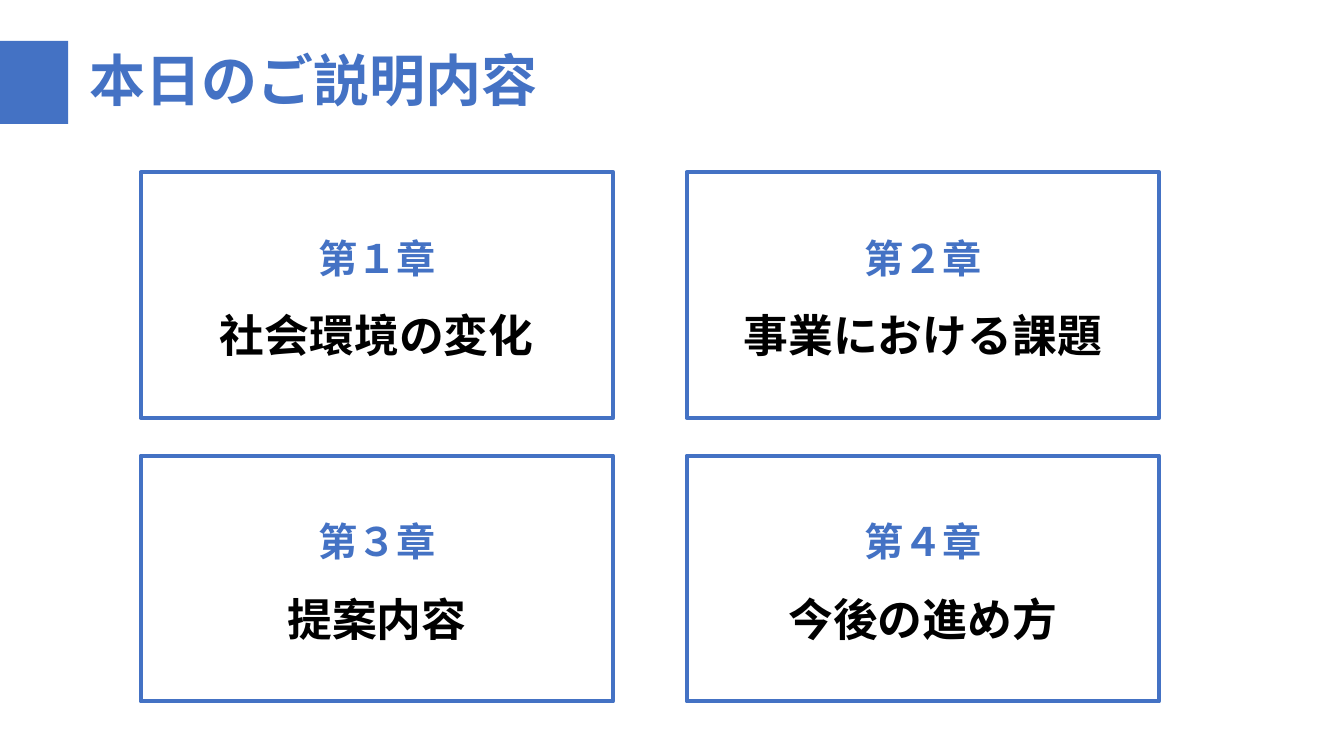
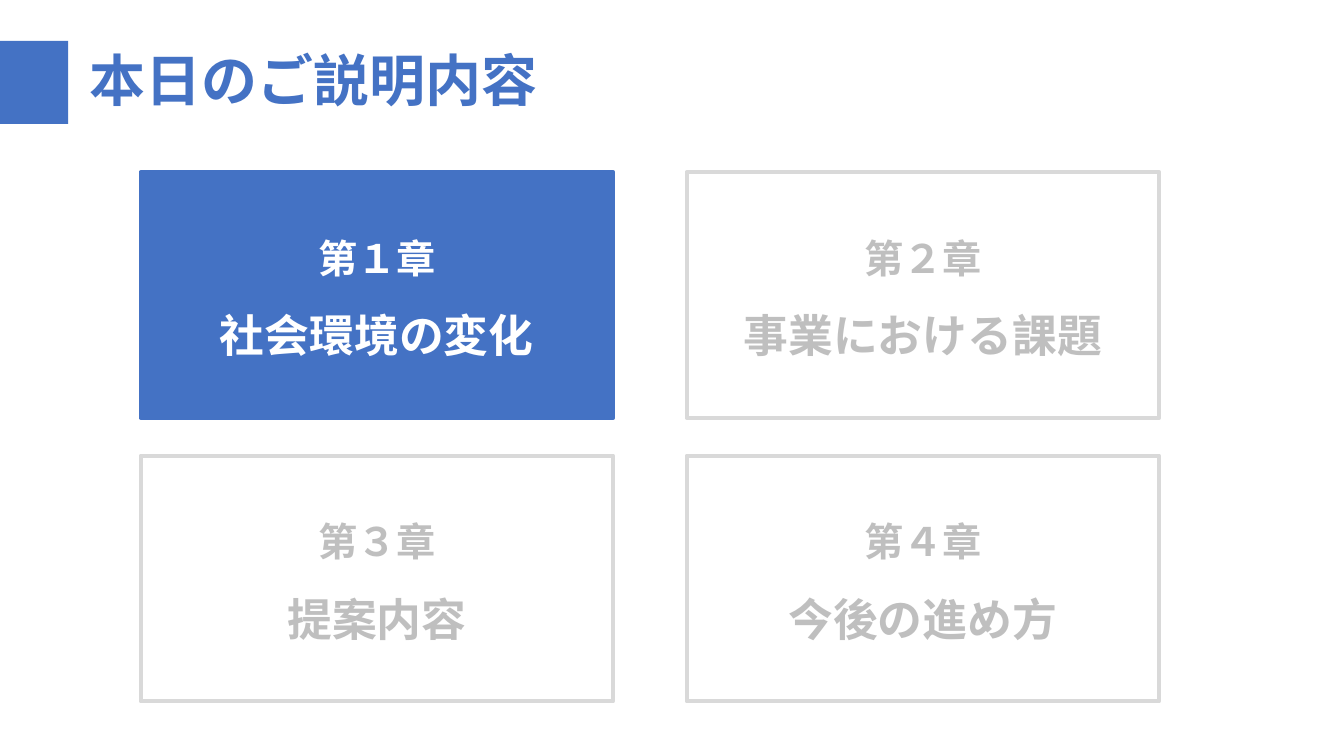
"""Build an agenda slide and its chapter one divider."""
from lxml import etree
from pptx import Presentation
from pptx.dml.color import RGBColor
from pptx.enum.shapes import MSO_SHAPE
from pptx.enum.text import MSO_AUTO_SIZE, PP_ALIGN
from pptx.oxml.ns import qn
from pptx.util import Emu, Pt

RECTANGLE = MSO_SHAPE.RECTANGLE
GROW = MSO_AUTO_SIZE.SHAPE_TO_FIT_TEXT
CENTER = PP_ALIGN.CENTER
JUSTIFY = PP_ALIGN.JUSTIFY

EMU_PER_PX = 9525
BLANK_LAYOUT = 6
FONT = "Noto Sans CJK JP"
BLUE, BLACK, WHITE = "4472C4", "000000", "FFFFFF"
LIGHT_GRAY, GRAY = "D9D9D9", "BFBFBF"

TITLE = "本日のご説明内容"
CHAPTERS = [
    ("第１章", "社会環境の変化"),
    ("第２章", "事業における課題"),
    ("第３章", "提案内容"),
    ("第４章", "今後の進め方"),
]
COLUMNS = 2
CARD_LEFT, CARD_TOP, CARD_WIDTH, CARD_HEIGHT = 134, 164, 450, 234
GAP_X, GAP_Y = 70, 36
TEXT_INSET_X, TEXT_INSET_Y, TEXT_HEIGHT = 29, 32, 144

NORMAL = {"fill": None, "border": BLUE, "number_color": BLUE, "name_color": BLACK}
ACTIVE = {"fill": BLUE, "border": BLUE, "number_color": WHITE, "name_color": WHITE}
MUTED = {"fill": None, "border": LIGHT_GRAY, "number_color": GRAY, "name_color": GRAY}


def px(*lengths):
    """Turn pixel lengths into EMU."""
    return [Emu(length * EMU_PER_PX) for length in lengths]


def color(value):
    """Turn a hex string into a colour."""
    return RGBColor.from_string(value)


def add_rectangle(shapes, box, fill=None, border=None):
    """Add a rectangle with an optional fill and border."""
    shape = shapes.add_shape(RECTANGLE, *px(*box))
    shape.shadow.inherit = False
    if fill:
        shape.fill.solid()
        shape.fill.fore_color.rgb = color(fill)
    else:
        shape.fill.background()
    if border:
        shape.line.color.rgb = color(border)
        shape.line.width = Pt(3)
    else:
        shape.line.fill.background()


def add_run(paragraph, text, size, text_color):
    """Add a bold run in the shared Latin and East Asian font."""
    run = paragraph.add_run()
    run.text = text
    run.font.size = Pt(size)
    run.font.bold = True
    run.font.color.rgb = color(text_color)
    run.font.name = FONT
    properties = run._r.get_or_add_rPr()
    east_asian = etree.Element(qn("a:ea"), typeface=FONT)
    properties.find(qn("a:latin")).addnext(east_asian)


def add_text(shapes, box, lines, alignment, line_spacing=None):
    """Add a text box with one paragraph per (text, size, colour) line."""
    frame = shapes.add_textbox(*px(*box)).text_frame
    frame.word_wrap = True
    frame.auto_size = GROW
    for index, line in enumerate(lines):
        paragraph = frame.add_paragraph() if index else frame.paragraphs[0]
        paragraph.alignment = alignment
        paragraph.line_spacing = line_spacing
        add_run(paragraph, *line)


def add_header(slide):
    """Add the blue band and the slide title."""
    add_rectangle(slide.shapes, (0, 39, 65, 79), fill=BLUE)
    add_text(slide.shapes, (76, 39, 490, 74), [(TITLE, 40, BLUE)], JUSTIFY)


def add_card(slide, index, style):
    """Add the grouped card of one chapter at its place in the grid."""
    row, column = divmod(index, COLUMNS)
    left = CARD_LEFT + column * (CARD_WIDTH + GAP_X)
    top = CARD_TOP + row * (CARD_HEIGHT + GAP_Y)
    number, name = CHAPTERS[index]
    shapes = slide.shapes.add_group_shape().shapes
    add_rectangle(shapes, (left, top, CARD_WIDTH, CARD_HEIGHT),
                  style["fill"], style["border"])
    text_box = (left + TEXT_INSET_X, top + TEXT_INSET_Y,
                CARD_WIDTH - 2 * TEXT_INSET_X, TEXT_HEIGHT)
    lines = [(number, 28, style["number_color"]), (name, 32, style["name_color"])]
    add_text(shapes, text_box, lines, CENTER, 1.5)


def add_agenda(presentation, styles):
    """Add an agenda slide with one card style per chapter."""
    slide = presentation.slides.add_slide(presentation.slide_layouts[BLANK_LAYOUT])
    add_header(slide)
    for index, style in enumerate(styles):
        add_card(slide, index, style)


def main():
    """Build and save the presentation."""
    presentation = Presentation()
    presentation.slide_width, presentation.slide_height = px(1280, 720)
    add_agenda(presentation, [NORMAL] * len(CHAPTERS))
    add_agenda(presentation, [ACTIVE] + [MUTED] * (len(CHAPTERS) - 1))
    presentation.save("out.pptx")


if __name__ == "__main__":
    main()
